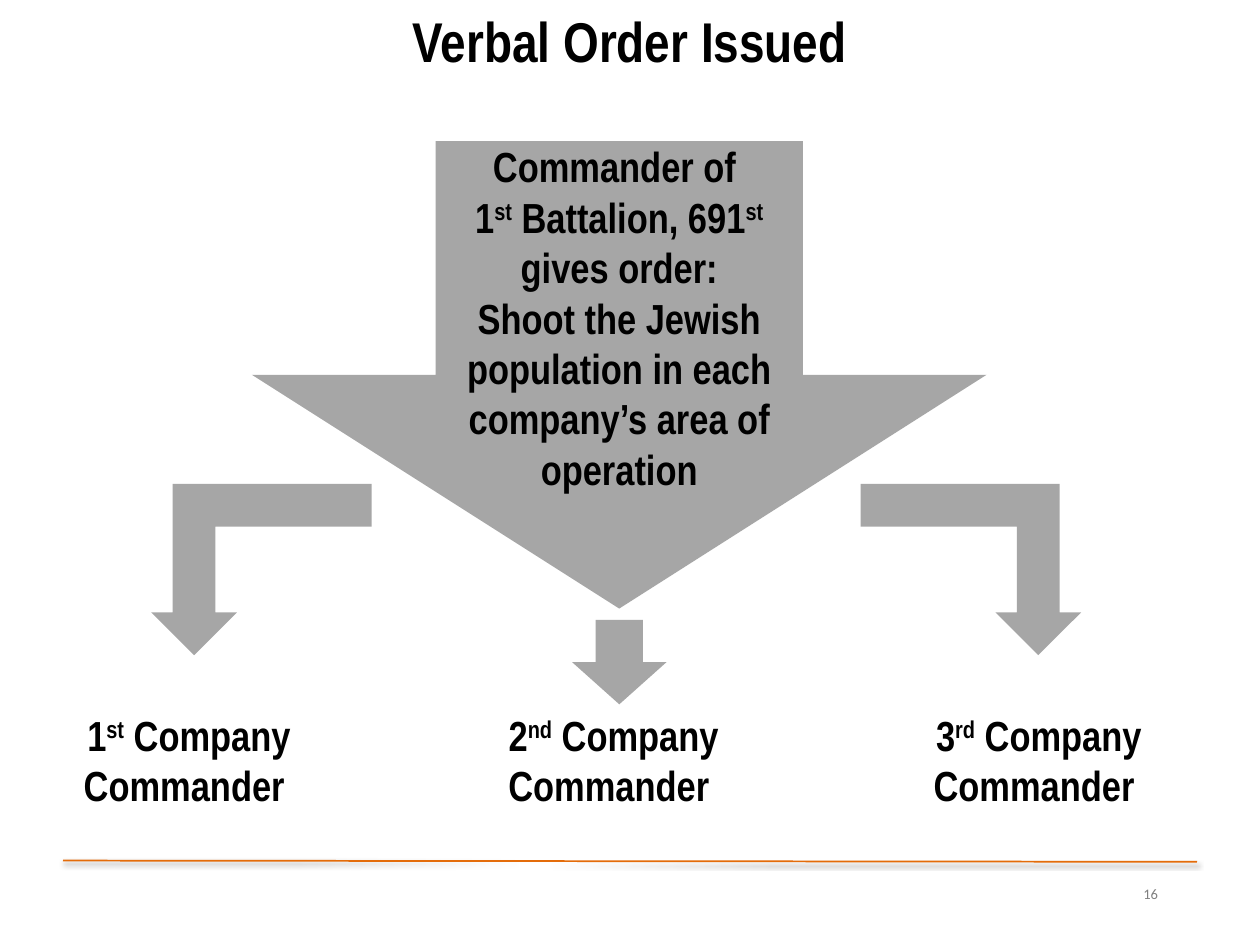
import pptx
import pptx.util
import pptx.dml.color
import pptx.enum.shapes
import pptx.enum.text
import pptx.oxml
import pptx.oxml.ns

Inches = pptx.util.Inches
Pt = pptx.util.Pt
SHAPE = pptx.enum.shapes.MSO_SHAPE
ALIGN = pptx.enum.text.PP_ALIGN
ANCHOR = pptx.enum.text.MSO_ANCHOR

COLORS = {"text": "000000", "arrow": "A6A6A6", "rule": "E46C0A", "number": "808080"}


def color(name):
    return pptx.dml.color.RGBColor.from_string(COLORS[name])


class OrderSlide:
    heading_font = "Arial Narrow"
    number_font = "Calibri"

    def __init__(self, presentation):
        self.slide = presentation.slides.add_slide(presentation.slide_layouts[5])

    def fill_text(self, frame, lines, size, align=ALIGN.CENTER, before=0,
                  font=heading_font, bold=True, text_color="text"):
        """Fill a text frame; parts between ^ marks are superscript."""
        frame.word_wrap = True
        frame.auto_size = pptx.enum.text.MSO_AUTO_SIZE.NONE
        for index, line in enumerate(lines):
            paragraph = frame.paragraphs[0] if index == 0 else frame.add_paragraph()
            paragraph.alignment = align
            paragraph.space_before = Pt(before)
            paragraph.font.name = font
            paragraph.font.size = Pt(size)
            paragraph.font.bold = bold
            paragraph.font.color.rgb = color(text_color)
            for part, text in enumerate(line.split("^")):
                run = paragraph.add_run()
                run.text = text
                if part % 2:
                    run.font._element.set("baseline", "30000")

    def title(self, text, left, top, width, height):
        title = self.slide.shapes.title
        title.left, title.top = Inches(left), Inches(top)
        title.width, title.height = Inches(width), Inches(height)
        title.text_frame.vertical_anchor = ANCHOR.TOP
        self.fill_text(title.text_frame, [text], 32)

    def text(self, lines, left, top, width, height, size=24, anchor=ANCHOR.TOP, **style):
        box = self.slide.shapes.add_textbox(
            Inches(left), Inches(top), Inches(width), Inches(height))
        box.text_frame.vertical_anchor = anchor
        self.fill_text(box.text_frame, lines, size, **style)

    def arrow(self, kind, left, top, width, height, rotation=0, mirrored=False):
        arrow = self.slide.shapes.add_shape(
            kind, Inches(left), Inches(top), Inches(width), Inches(height))
        arrow.shadow.inherit = False
        arrow.fill.solid()
        arrow.fill.fore_color.rgb = color("arrow")
        arrow.line.fill.background()
        arrow.rotation = rotation
        if mirrored:
            arrow._element.spPr.get_or_add_xfrm().set("flipH", "1")

    def rule(self, start_x, start_y, end_x, end_y):
        rule = self.slide.shapes.add_connector(
            pptx.enum.shapes.MSO_CONNECTOR.STRAIGHT,
            Inches(start_x), Inches(start_y), Inches(end_x), Inches(end_y))
        rule.line.color.rgb = color("rule")
        rule.line.width = Pt(1)
        rule._element.spPr.append(pptx.oxml.parse_xml(
            f'<a:effectLst {pptx.oxml.ns.nsdecls("a")}>'
            f'<a:outerShdw blurRad="{Pt(3.1)}" dist="{Pt(1.6)}" dir="5400000" rotWithShape="0">'
            f'<a:srgbClr val="{COLORS["text"]}"><a:alpha val="38000"/></a:srgbClr>'
            '</a:outerShdw></a:effectLst>'))


def main():
    presentation = pptx.Presentation()
    presentation.slide_width, presentation.slide_height = Inches(10), Inches(7.5)
    page = OrderSlide(presentation)

    page.rule(0.5, 6.83, 9.5, 6.84)
    page.title("Verbal Order Issued", 0, 0, 10, 0.95)

    companies = [("1^st^", 0, 3), ("2^nd^", 3.33, 3.08), ("3^rd^", 6.83, 2.83)]
    for ordinal, left, width in companies:
        page.text([f"{ordinal} Company Commander "], left, 5.58, width, 1.25, before=4.8)

    page.arrow(SHAPE.DOWN_ARROW, 2, 1.12, 5.83, 3.71)
    page.arrow(SHAPE.DOWN_ARROW, 4.54, 4.92, 0.75, 0.67)
    for left, mirrored in [(1.2, False), (6.83, True)]:
        page.arrow(SHAPE.BENT_UP_ARROW, left, 3.84, 1.75, 1.36, 180, mirrored)

    page.text(["Commander of ",
               "1^st^ Battalion, 691^st^ gives order:",
               "Shoot the Jewish population in each company’s area of operation"],
              3.33, 1.07, 3.17, 2.93)
    page.text(["16"], 6.96, 6.89, 2.33, 0.4, size=8.3, anchor=ANCHOR.MIDDLE,
              align=ALIGN.RIGHT, font=page.number_font, bold=False, text_color="number")

    presentation.save("out.pptx")


if __name__ == "__main__":
    main()
